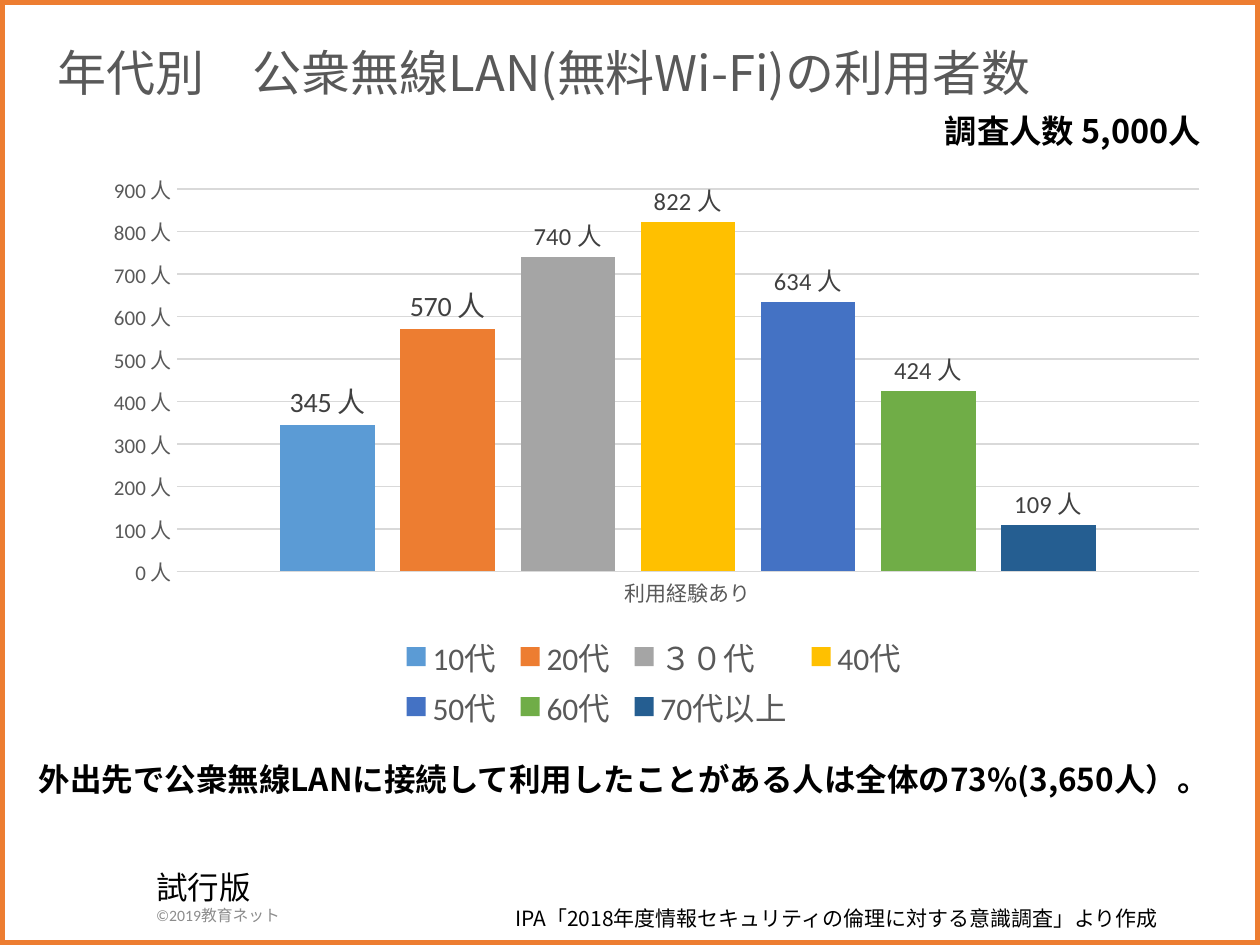
from dataclasses import dataclass
from lxml import etree
from pptx import Presentation
from pptx.chart.data import CategoryChartData as ChartData
from pptx.dml.color import RGBColor as RGB
from pptx.enum.chart import XL_CHART_TYPE as Kind
from pptx.enum.chart import XL_LABEL_POSITION as Spot
from pptx.enum.chart import XL_LEGEND_POSITION as Side
from pptx.enum.chart import XL_TICK_MARK as Tick
from pptx.enum.shapes import MSO_SHAPE as Shape
from pptx.enum.text import PP_ALIGN as Align
from pptx.oxml.ns import qn
from pptx.util import Inches, Pt


@dataclass(frozen=True)
class Theme:
    latin: str = "Calibri"
    cjk: str = "Noto Sans CJK JP"
    ink: str = "000000"
    soft: str = "595959"
    label: str = "404040"
    pale: str = "8C8C8C"
    grid: str = "D9D9D9"
    frame: str = "ED7D31"
    title: float = 28
    count: float = 18.5
    body: float = 18
    axis: float = 12
    base: float = 10
    tiny: float = 9


T = Theme()

TITLE = "年代別\u3000公衆無線LAN(無料Wi-Fi)の利用者数"
COUNT = "調査人数 5,000人"
RESULT = "外出先で公衆無線LANに接続して利用したことがある人は全体の73%(3,650人）。"
SOURCE = "IPA「2018年度情報セキュリティの倫理に対する意識調査」より作成"
TRIAL = "試行版"
RIGHTS = "©2019教育ネット"

GROUP = "利用経験あり"
UNIT = '#,##0_ "人"'
# age group, users, bar colour, label size
AGES = [
    ("10代", 345, "5B9BD5", 16),
    ("20代", 570, "ED7D31", 16),
    ("３０代", 740, "A5A5A5", 14),
    ("40代", 822, "FFC000", 14),
    ("50代", 634, "4472C4", 14),
    ("60代", 424, "70AD47", 14),
    ("70代以上", 109, "255E91", 14),
]


def area(*nums):
    return [Inches(n) for n in nums]


def style(font, size, color, face=T.latin, bold=False):
    font.size, font.name, font.bold = Pt(size), face, bold
    font.color.rgb = RGB.from_string(color)


def write(slide, box, *lines, align=Align.LEFT, space=None, face=T.cjk, bold=False):
    """Add a text box; each line is (text, size, colour)."""
    frame = slide.shapes.add_textbox(*area(*box)).text_frame
    frame.word_wrap = True
    for i, (text, size, color) in enumerate(lines):
        para = frame.add_paragraph() if i else frame.paragraphs[0]
        para.alignment, para.line_spacing = align, space
        run = para.add_run()
        run.text = text
        style(run.font, size, color, face, bold)
        east = etree.SubElement(run.font._element, qn("a:ea"))
        east.set("typeface", T.cjk)


def place(node, index, inner=False, **rect):
    """Fix a chart part at x, y, w, h, as shares of the chart's size."""
    for old in node.findall(qn("c:layout")):
        node.remove(old)
    layout = etree.Element(qn("c:layout"))
    node.insert(index, layout)
    manual = etree.SubElement(layout, qn("c:manualLayout"))
    items = [("layoutTarget", "inner")] if inner else []
    items += [("xMode", "edge"), ("yMode", "edge"), *rect.items()]
    for name, val in items:
        etree.SubElement(manual, qn("c:" + name)).set("val", str(val))


def rule(line):
    line.color.rgb = RGB.from_string(T.grid)
    line.width = Pt(0.75)


def add_bars(slide, box):
    data = ChartData(number_format=UNIT)
    data.categories = [GROUP]
    for name, users, *_ in AGES:
        data.add_series(name, [users])
    chart = slide.shapes.add_chart(Kind.COLUMN_CLUSTERED, *area(*box), data).chart
    chart.has_title = False
    style(chart.font, T.base, T.ink)

    plot = chart.plots[0]
    plot.gap_width, plot.overlap, plot.vary_by_categories = 219, -27, False
    for row, (_, _, color, size) in zip(plot.series, AGES):
        row.format.fill.solid()
        row.format.fill.fore_color.rgb = RGB.from_string(color)
        tags = row.data_labels
        tags.show_value, tags.position = True, Spot.OUTSIDE_END
        tags.number_format, tags.number_format_is_linked = UNIT, False
        style(tags.font, size, T.label)

    cats, vals = chart.category_axis, chart.value_axis
    for axis in (cats, vals):
        axis.major_tick_mark = axis.minor_tick_mark = Tick.NONE
        style(axis.tick_labels.font, T.axis, T.soft)
    rule(cats.format.line)
    vals.format.line.fill.background()
    vals.minimum_scale, vals.maximum_scale, vals.major_unit = 0, 900, 100
    vals.has_major_gridlines = True
    rule(vals.major_gridlines.format.line)
    vals.tick_labels.number_format = UNIT
    vals.tick_labels.number_format_is_linked = False

    chart.has_legend = True
    key = chart.legend
    key.position, key.include_in_layout = Side.BOTTOM, False
    style(key.font, T.body, T.soft)
    place(key._element, 1, x=0.27, y=0.81, w=0.46, h=0.18)
    root = chart._chartSpace.chart.plotArea
    place(root, 0, inner=True, x=0.08, y=0.05, w=0.9, h=0.66)


def main():
    deck = Presentation()
    deck.slide_width, deck.slide_height = area(10, 7.5)
    slide = deck.slides.add_slide(deck.slide_layouts[6])

    edge = slide.shapes.add_shape(Shape.RECTANGLE, *area(0, 0, 10, 7.5))
    edge.shadow.inherit = False
    edge.fill.background()
    edge.line.color.rgb = RGB.from_string(T.frame)
    edge.line.width = Pt(6)

    write(slide, (1.14, 6.84, 2.89, 0.57), (TRIAL, T.body, T.ink),
          (RIGHTS, T.tiny, T.pale), face=T.latin)
    write(slide, (-0.07, 0.34, 8.77, 0.72), (TITLE, T.title, T.soft),
          align=Align.CENTER, space=0.9)
    write(slide, (0.21, 6.02, 9.79, 0.61), (RESULT, T.body, T.ink),
          space=0.9, bold=True)
    write(slide, (7.4, 0.89, 2.6, 0.38), (COUNT, T.count, T.ink),
          space=0.8, bold=True)
    add_bars(slide, (0.68, 1.27, 9.02, 4.6))
    write(slide, (3.99, 7.14, 6.01, 0.3), (SOURCE, T.axis, T.ink))
    deck.save("out.pptx")


if __name__ == "__main__":
    main()
